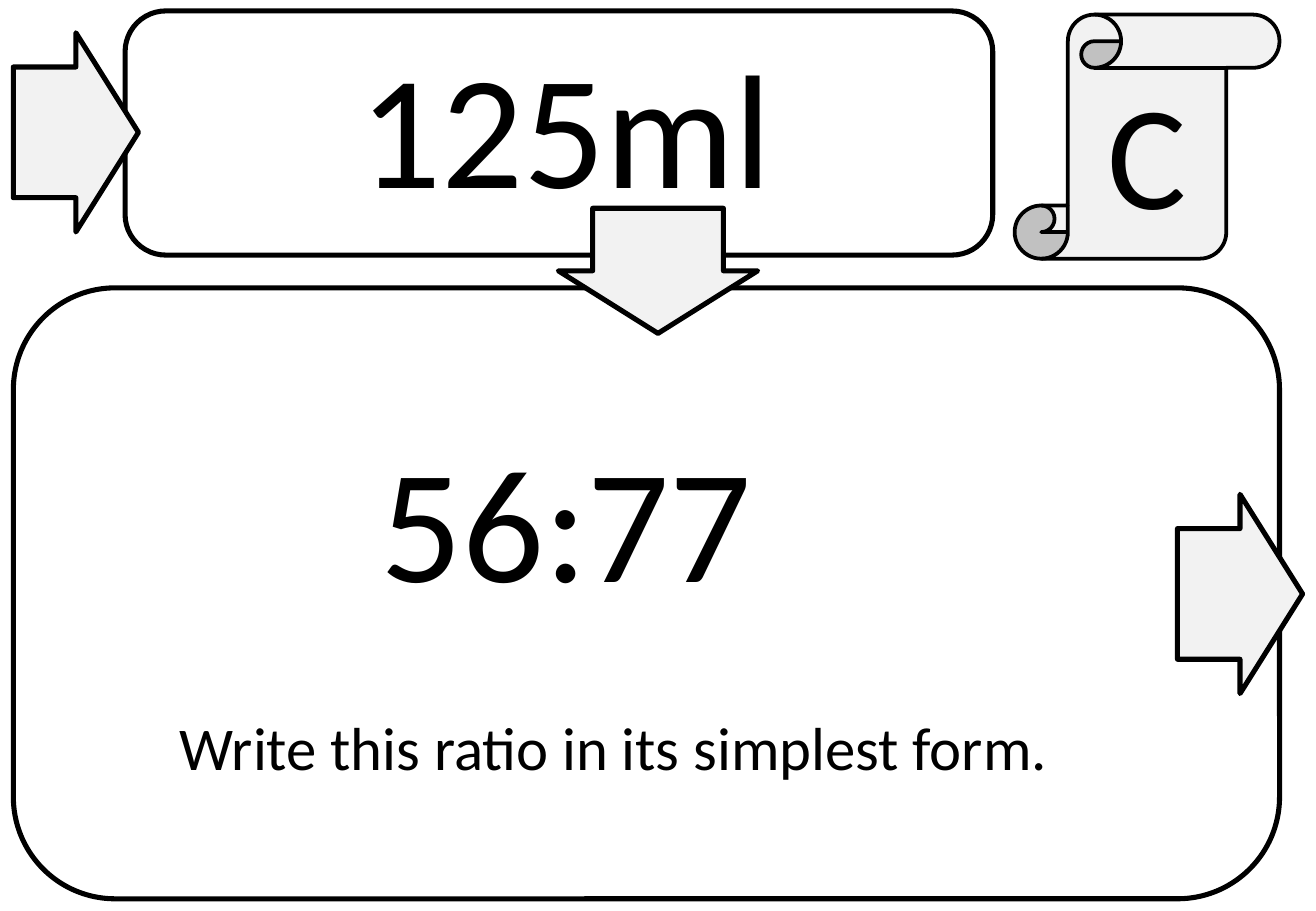
from pptx import Presentation
from pptx.dml.color import RGBColor
from pptx.enum.shapes import MSO_SHAPE
from pptx.enum.text import MSO_ANCHOR, MSO_AUTO_SIZE, PP_ALIGN
from pptx.util import Pt

# Content: lengths in px, 100 px to the inch
SLIDE_SIZE = (1083, 750)
COLOURS = {"ink": "000000", "panel": "F2F2F2"}
FONT = "Calibri"

CARDS = [(11, 237, 1042, 503), (103, 9, 714, 201)]
ARROW_SIZE = (103, 164)
ARROWS = [(969, 407, 0), (490, 141, 90), (11, 27, 0)]  # left, top, rotation
SCROLL = ("C", (835, 12, 218, 201), 88)
LABELS = [
    ("125ml", (286, 17, 363, 172), 96),
    ("56:77", (303, 341, 329, 172), 96),
    ("Write this ratio in its simplest form.", (138, 579, 741, 71), 36),
]

EMU_PER_PX = 9144


def emu(lengths):
    return [length * EMU_PER_PX for length in lengths]


def colour(name):
    return RGBColor.from_string(COLOURS[name])


def add_outline(slide, kind, box, fill=None, line_width=3, adjustments=()):
    shape = slide.shapes.add_shape(kind, *emu(box))
    shape.shadow.inherit = False
    if fill:
        shape.fill.solid()
        shape.fill.fore_color.rgb = colour(fill)
    else:
        shape.fill.background()
    shape.line.color.rgb = colour("ink")
    shape.line.width = Pt(line_width)
    for index, value in enumerate(adjustments):
        shape.adjustments[index] = value
    return shape


def write_text(shape, text, size, align=PP_ALIGN.LEFT, anchor=MSO_ANCHOR.TOP,
               wrap=True, auto_size=MSO_AUTO_SIZE.NONE):
    frame = shape.text_frame
    frame.word_wrap = wrap
    frame.auto_size = auto_size
    frame.vertical_anchor = anchor
    paragraph = frame.paragraphs[0]
    paragraph.alignment = align
    run = paragraph.add_run()
    run.text = text
    run.font.name = FONT
    run.font.size = Pt(size)
    run.font.color.rgb = colour("ink")


def main():
    presentation = Presentation()
    presentation.slide_width, presentation.slide_height = emu(SLIDE_SIZE)
    slide = presentation.slides.add_slide(presentation.slide_layouts[6])

    # Question and answer cards
    for box in CARDS:
        add_outline(slide, MSO_SHAPE.ROUNDED_RECTANGLE, box)

    # Arrows leading through the cards
    for left, top, rotation in ARROWS:
        arrow = add_outline(slide, MSO_SHAPE.RIGHT_ARROW, (left, top, *ARROW_SIZE),
                            fill="panel", adjustments=(0.656, 0.5))
        arrow.rotation = rotation

    # Scroll with the card's letter
    letter, box, size = SCROLL
    scroll = add_outline(slide, MSO_SHAPE.VERTICAL_SCROLL, box, fill="panel",
                         line_width=2.25, adjustments=(0.218,))
    write_text(scroll, letter, size, align=PP_ALIGN.CENTER, anchor=MSO_ANCHOR.MIDDLE)

    # Answer, ratio and instruction
    for text, box, size in LABELS:
        label = slide.shapes.add_textbox(*emu(box))
        write_text(label, text, size, wrap=False,
                   auto_size=MSO_AUTO_SIZE.SHAPE_TO_FIT_TEXT)

    presentation.save("out.pptx")


if __name__ == "__main__":
    main()
